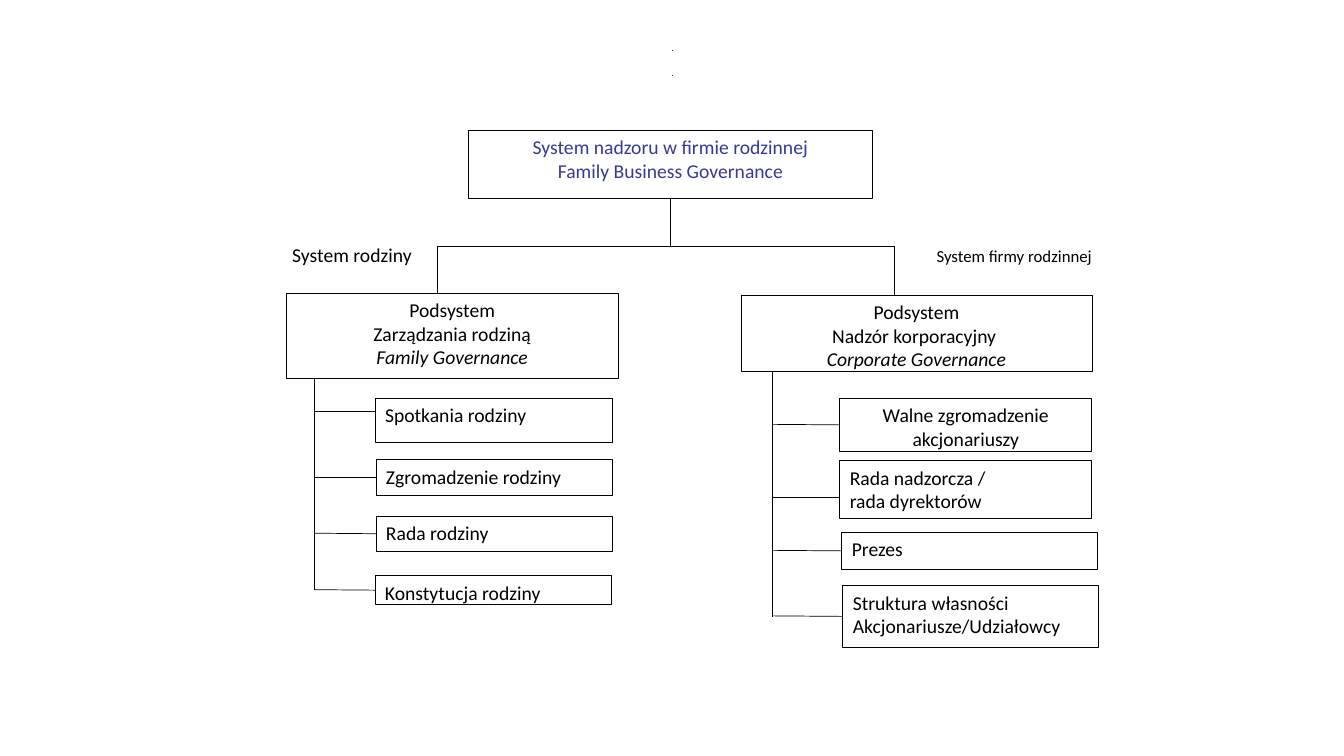
from pptx import Presentation
from pptx.dml.color import RGBColor
from pptx.enum.shapes import MSO_CONNECTOR as Connector, MSO_SHAPE as Shape
from pptx.enum.text import MSO_ANCHOR as Anchor, PP_ALIGN as Align
from pptx.oxml.ns import qn
from pptx.util import Pt
from lxml import etree

PX = 9144
FONT = "Calibri"
BLACK = RGBColor(0x00, 0x00, 0x00)
WHITE = RGBColor(0xFF, 0xFF, 0xFF)
INDIGO = RGBColor(0x33, 0x3A, 0x97)
DOT_BLUE = RGBColor(0x5B, 0x9B, 0xD5)


def add_box(page, box, lines=(), align=Align.LEFT, size=14, color=BLACK,
            border=BLACK, fill=WHITE, weight=0.5, spacing=None, italic_last=False):
    shape = page.shapes.add_shape(Shape.RECTANGLE, *(length * PX for length in box))
    shape.shadow.inherit = False
    shape.fill.solid()
    shape.fill.fore_color.rgb = fill
    shape.line.color.rgb = border
    shape.line.width = Pt(weight)
    frame = shape.text_frame
    frame.word_wrap = True
    frame.vertical_anchor = Anchor.TOP
    for index, line in enumerate(lines):
        para = frame.add_paragraph() if index else frame.paragraphs[0]
        para.text = line
        para.alignment = align
        if spacing:
            para.line_spacing = spacing
        para.font.name = FONT
        para.font.size = Pt(size)
        para.font.color.rgb = color
        para.font.italic = italic_last and index == len(lines) - 1
    return shape


def add_line(page, x1, y1, x2, y2):
    line = page.shapes.add_connector(
        Connector.STRAIGHT, x1 * PX, y1 * PX, x2 * PX, y2 * PX)
    line.line.color.rgb = BLACK
    line.line.width = Pt(0.5)
    etree.SubElement(line._element.spPr, qn("a:effectLst"))
    return line


def add_dots(page, box):
    left, top, width, height = box
    for y in (top, top + height):
        add_box(page, (left, y, width, 0), fill=DOT_BLUE, weight=0.75)


def add_label(page, box, text, size):
    add_box(page, box, [text], size=size, border=WHITE, spacing=1.15)


def add_root(page, box, lines, left_drop, right_drop):
    left, top, width, height = box
    root = add_box(page, box, lines, Align.CENTER, color=INDIGO)
    middle, bar = left + width // 2, top + 115
    stem = add_line(page, middle, top + height, middle, bar)
    stem.begin_connect(root, 2)
    add_line(page, left_drop[0], bar, right_drop[0], bar)
    for x, bottom in (left_drop, right_drop):
        add_line(page, x, bar, x, bottom)


def add_branch(page, box, lines, trunk_inset, trunk_end, items):
    left, top, width, height = box
    add_box(page, box, lines, Align.CENTER, italic_last=True)
    trunk = left + trunk_inset
    add_line(page, trunk, top + height, trunk, top + trunk_end)
    for item_lines, item_box, align, stub in items:
        x, y, item_width, item_height = item_box
        x, y = left + x, top + y
        joined = stub is None
        stub_y = y + item_height // 2 if joined else top + stub
        item = add_box(page, (x, y, item_width, item_height), item_lines, align)
        line = add_line(page, trunk, stub_y, x, stub_y)
        if joined:
            line.end_connect(item, 1)


def add_governance_chart(page):
    add_label(page, (280, 233, 143, 28), "System rodziny", 14)
    add_label(page, (919, 236, 189, 28), "System firmy rodzinnej", 12)
    add_dots(page, (667, 50, 0, 25))
    add_root(page, (465, 129, 400, 68),
             ["System nadzoru w firmie rodzinnej", "Family Business Governance"],
             (434, 291), (887, 293))
    add_branch(page, (284, 291, 329, 84),
               ["Podsystem", "Zarządzania rodziną", "Family Governance"], 28, 294, [
                   (["Spotkania rodziny"], (88, 104, 235, 44), Align.LEFT, 117),
                   (["Zgromadzenie rodziny"], (89, 165, 234, 36), Align.LEFT, None),
                   (["Rada rodziny"], (89, 221, 234, 35), Align.LEFT, None),
                   (["Konstytucja rodziny"], (88, 280, 234, 29), Align.LEFT, None)])
    add_branch(page, (735, 293, 348, 76),
               ["Podsystem", "Nadzór korporacyjny ", "Corporate Governance"], 31, 319, [
                   (["Walne zgromadzenie akcjonariuszy"], (98, 102, 250, 53),
                    Align.CENTER, None),
                   (["Rada nadzorcza /", "rada dyrektorów"], (98, 164, 250, 57),
                    Align.LEFT, 200),
                   (["Prezes"], (100, 235, 253, 37), Align.LEFT, None),
                   (["Struktura własności", "Akcjonariusze/Udziałowcy"],
                    (101, 288, 253, 61), Align.LEFT, None)])


def main():
    deck = Presentation()
    deck.slide_width = 1333 * PX
    deck.slide_height = 750 * PX
    page = deck.slides.add_slide(deck.slide_layouts[6])
    add_governance_chart(page)
    deck.save("out.pptx")


if __name__ == "__main__":
    main()
